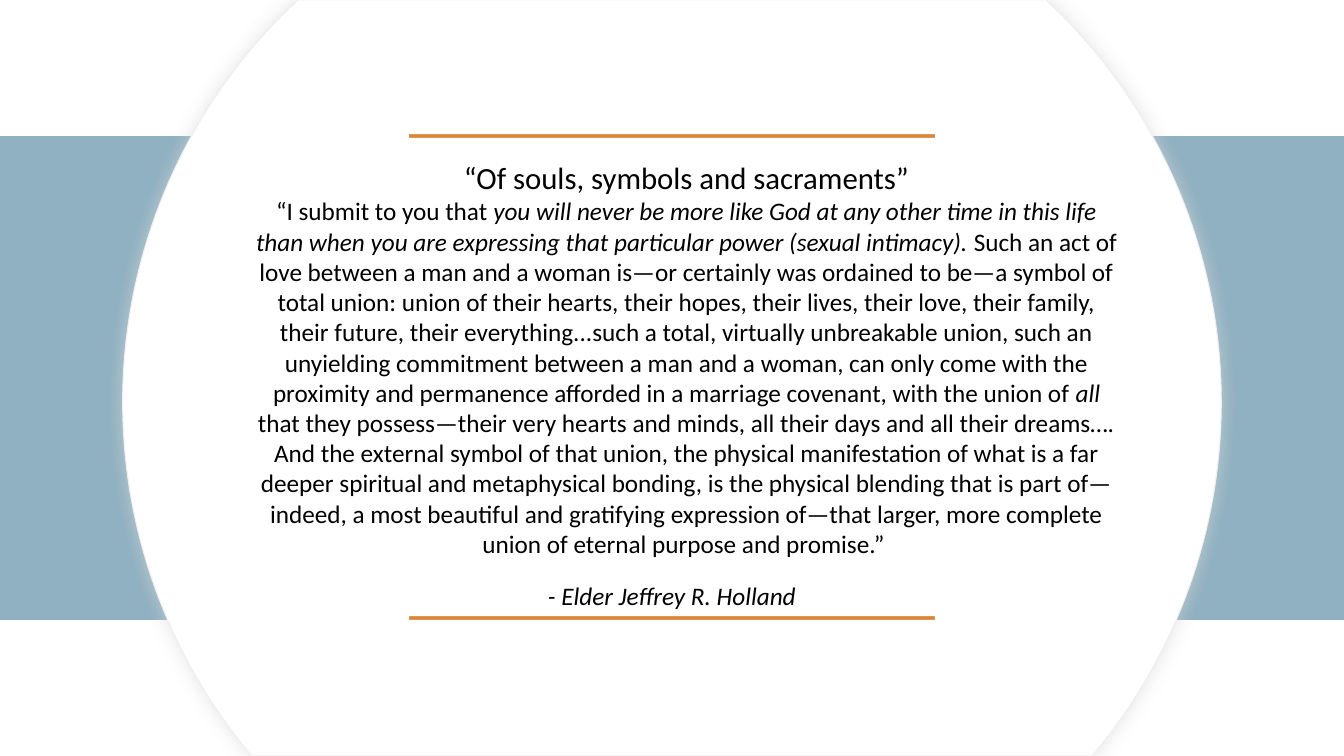
from dataclasses import dataclass
from itertools import pairwise
from math import asin, cos, pi, sin, tan

from lxml.etree import SubElement as Sub
from pptx import Presentation as Deck
from pptx.dml.color import RGBColor as Rgb
from pptx.enum.shapes import MSO_SHAPE as Kind
from pptx.enum.text import MSO_ANCHOR as Anchor, PP_ALIGN as Align
from pptx.oxml.ns import qn
from pptx.util import Inches, Pt


@dataclass(frozen=True)
class Theme:
    band: str = "90B1C2"
    disc: str = "FFFFFF"
    rim: str = "EFEFEF"
    glow: str = "D8D8D8"
    rule: str = "ED7D31"
    edge: str = "D09D5C"
    ink: str = "000000"
    font: str = "Calibri"
    head: int = 22
    body: int = 18
    line: float = 0.75
    blur: int = 11
    alpha: int = 63


def put(item, vals):
    for name, val in vals.items():
        setattr(item, name, val)


class Page:
    """Draw styled elements on one slide, with lengths in percent of its size."""

    def __init__(self, deck, theme):
        self.wide, self.high = deck.slide_width, deck.slide_height
        self.theme = theme
        self.shapes = deck.slides.add_slide(deck.slide_layouts[6]).shapes

    def box(self, x, y, w, h):
        return [round(part * size / 100) for part, size in
                zip((x, y, w, h), (self.wide, self.high) * 2)]

    def paint(self, shape, fill, edge):
        shape.shadow.inherit = False
        shape.fill.solid()
        shape.fill.fore_color.rgb = Rgb.from_string(fill)
        shape.line.color.rgb = Rgb.from_string(edge)
        shape.line.width = Pt(self.theme.line)

    def bar(self, area, fill, edge):
        shape = self.shapes.add_shape(Kind.RECTANGLE, *self.box(*area))
        self.paint(shape, fill, edge)

    def disc(self, x, y, size):
        mid, down, rad, _ = self.box(x, y, size, 0)
        low, high = asin(-down / rad), asin((self.high - down) / rad)
        turns = [low, 0, high, pi - high, pi, pi - low]

        def spot(turn, pull=0):
            return (round(mid + rad * (cos(turn) - pull * sin(turn))),
                    round(down + rad * (sin(turn) + pull * cos(turn))))

        form = self.shapes.build_freeform(*spot(low))
        form.add_line_segments([spot(turn) for turn in turns[1:]], close=True)
        shape = form.convert_to_shape()
        steps = list(shape.element.iter(qn("a:lnTo")))
        for n, (step, (start, end)) in enumerate(zip(steps, pairwise(turns))):
            if n != 2:
                pull = 4 / 3 * tan((end - start) / 4)
                self.bend(shape, step, (spot(start, pull), spot(end, -pull)))
        self.paint(shape, self.theme.disc, self.theme.rim)
        self.glow(shape)

    def bend(self, shape, step, grips):
        curve = step.makeelement(qn("a:cubicBezTo"))
        for x, y in grips:
            Sub(curve, qn("a:pt"), x=str(x - shape.left), y=str(y - shape.top))
        step.getparent().replace(step, curve)
        curve.append(step[0])

    def glow(self, shape):
        group = shape.element.spPr.find(qn("a:effectLst"))
        cast = Sub(group, qn("a:outerShdw"), blurRad=str(Pt(self.theme.blur)),
                   dist="0", dir="0", algn="ctr", rotWithShape="0")
        tint = Sub(cast, qn("a:srgbClr"), val=self.theme.glow)
        Sub(tint, qn("a:alpha"), val=str(self.theme.alpha * 1000))

    def text(self, area, paras, space=1.0):
        frame = self.shapes.add_textbox(*self.box(*area)).text_frame
        put(frame, {"word_wrap": True, "vertical_anchor": Anchor.MIDDLE})
        for n, (size, runs) in enumerate(paras):
            para = frame.add_paragraph() if n else frame.paragraphs[0]
            put(para, {"alignment": Align.CENTER, "line_spacing": space})
            for words, slant in runs:
                run = para.add_run()
                run.text = words
                put(run.font, {"name": self.theme.font, "size": Pt(size),
                               "italic": slant})
                run.font.color.rgb = Rgb.from_string(self.theme.ink)


TITLE = [("“Of souls, symbols and sacraments”", False)]
QUOTE = [
    ("“I submit to you that ", False),
    ("you will never be more like God at any other time in this life than "
     "when you are expressing that particular power (sexual intimacy).", True),
    (" Such an act of love between a man and a woman is—or certainly was "
     "ordained to be—a symbol of total union: union of their hearts, their "
     "hopes, their lives, their love, their family, their future, their "
     "everything...such a total, virtually unbreakable union, such an "
     "unyielding commitment between a man and a woman, can only come with "
     "the proximity and permanence afforded in a marriage covenant, with "
     "the union of ", False),
    ("all ", True),
    ("that they possess—their very hearts and minds, all their days and all "
     "their dreams…. And the external symbol of that union, the physical "
     "manifestation of what is a far deeper spiritual and metaphysical "
     "bonding, is the physical blending that is part of—indeed, a most "
     "beautiful and gratifying expression of—that larger, more complete "
     "union of eternal purpose and promise.” ", False),
]
SIGN = [("- Elder Jeffrey R. Holland", True)]


def main():
    deck = Deck()
    put(deck, {"slide_width": Inches(13.33), "slide_height": Inches(7.5)})
    theme = Theme()
    page = Page(deck, theme)
    page.bar((0, 18, 100, 63.95), theme.band, theme.band)
    page.disc(50, 53.2, 40.87)
    page.text((18.15, 22.3, 65.87, 50.27),
              [(theme.head, TITLE), (theme.body, QUOTE)])
    for top in (17.8, 81.5):
        page.bar((30.5, top, 39, 0.4), theme.rule, theme.edge)
    page.text((26.1, 72.8, 47.8, 12.4), [(theme.body, SIGN)], 0.9)
    deck.save("out.pptx")


if __name__ == "__main__":
    main()
